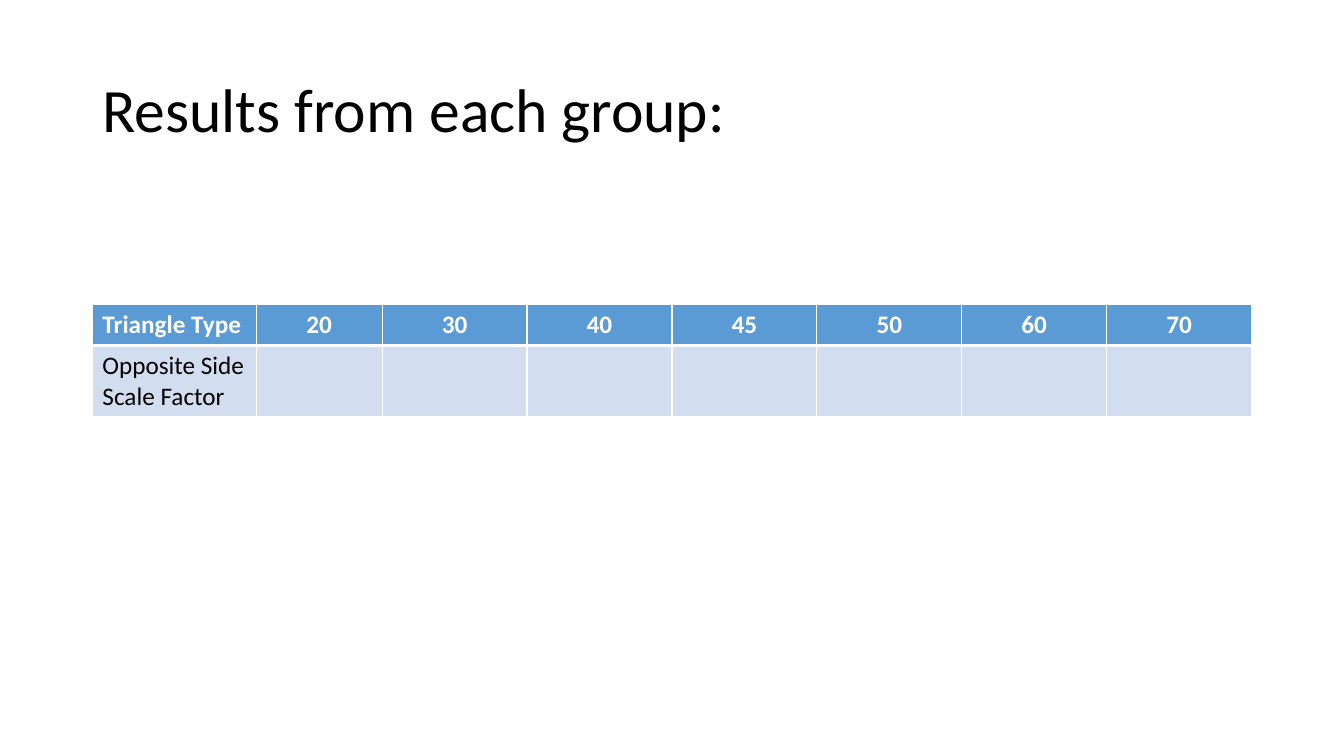
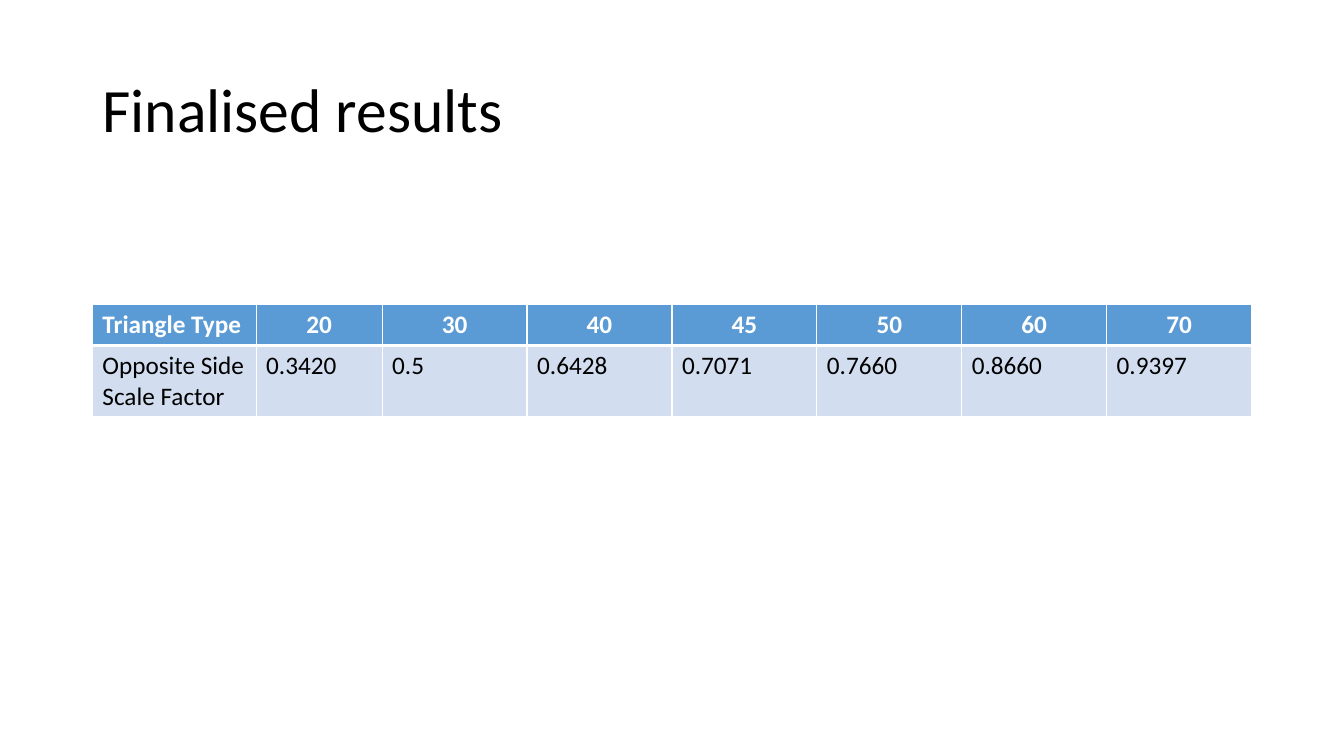
from lxml.etree import SubElement
from pptx import Presentation
from pptx.dml.color import RGBColor
from pptx.enum.text import MSO_ANCHOR as Anchor, PP_ALIGN as Align
from pptx.oxml.ns import qn
from pptx.util import Pt

EMU_PER_PX = 9525
FONT = "Calibri"
BLACK, WHITE = "000000", "FFFFFF"
HEADER_BLUE, BODY_BLUE = "5B9BD5", "D2DEEF"

LEFT, CONTENT_WIDTH = 88, 1104
TITLE_TOP, TITLE_HEIGHT = 38, 139
TABLE_TOP = 290
COLUMN_WIDTHS = [156, 120] + [138] * 6
ROW_HEIGHTS = [39, 67]

HEADINGS = ["Triangle Type", "20", "30", "40", "45", "50", "60", "70"]
ROW_LABEL = "Opposite Side Scale Factor"
SCALE_FACTORS = ["0.3420", "0.5", "0.6428", "0.7071", "0.7660", "0.8660", "0.9397"]
SLIDES = [
    ("Results from each group:", [""] * len(SCALE_FACTORS)),
    ("Finalised results", SCALE_FACTORS),
]


def px(length):
    return length * EMU_PER_PX


def rgb(color):
    return RGBColor.from_string(color)


def style_paragraph(paragraph, size, color, bold=False, align=Align.LEFT):
    paragraph.alignment = align
    font = paragraph.font
    font.name, font.size, font.bold = FONT, Pt(size), bold
    font.color.rgb = rgb(color)


def add_title(slide, text):
    title = slide.shapes.title
    title.left, title.top = px(LEFT), px(TITLE_TOP)
    title.width, title.height = px(CONTENT_WIDTH), px(TITLE_HEIGHT)
    frame = title.text_frame
    frame.text = text
    frame.vertical_anchor = Anchor.MIDDLE
    paragraph = frame.paragraphs[0]
    paragraph.line_spacing = 0.9
    style_paragraph(paragraph, 44, BLACK)


def add_borders(cell, top, bottom):
    properties = cell._tc.get_or_add_tcPr()
    for edge, points in (("lnL", 1), ("lnR", 1), ("lnT", top), ("lnB", bottom)):
        line = SubElement(properties, qn(f"a:{edge}"), w=str(Pt(points)))
        fill = SubElement(line, qn("a:solidFill"))
        SubElement(fill, qn("a:srgbClr"), val=WHITE)


def fill_cell(cell, text, is_header, align):
    add_borders(cell, *((1, 3) if is_header else (3, 1)))
    cell.fill.solid()
    cell.fill.fore_color.rgb = rgb(HEADER_BLUE if is_header else BODY_BLUE)
    cell.text = text
    style_paragraph(cell.text_frame.paragraphs[0], 18,
                    WHITE if is_header else BLACK, is_header, align)


def add_results_table(slide, factors):
    rows = [HEADINGS, [ROW_LABEL] + factors]
    table = slide.shapes.add_table(
        len(rows), len(HEADINGS), px(LEFT), px(TABLE_TOP),
        px(CONTENT_WIDTH), px(sum(ROW_HEIGHTS))).table
    for column, width in zip(table.columns, COLUMN_WIDTHS):
        column.width = px(width)
    for row_index, (row, height) in enumerate(zip(rows, ROW_HEIGHTS)):
        table.rows[row_index].height = px(height)
        is_header = row_index == 0
        for column_index, text in enumerate(row):
            align = Align.CENTER if is_header and column_index else Align.LEFT
            fill_cell(table.cell(row_index, column_index), text, is_header, align)


def main():
    deck = Presentation()
    deck.slide_width, deck.slide_height = px(1280), px(720)
    title_only = deck.slide_layouts.get_by_name("Title Only")
    for title, factors in SLIDES:
        slide = deck.slides.add_slide(title_only)
        add_title(slide, title)
        add_results_table(slide, factors)
    deck.save("out.pptx")


if __name__ == "__main__":
    main()
